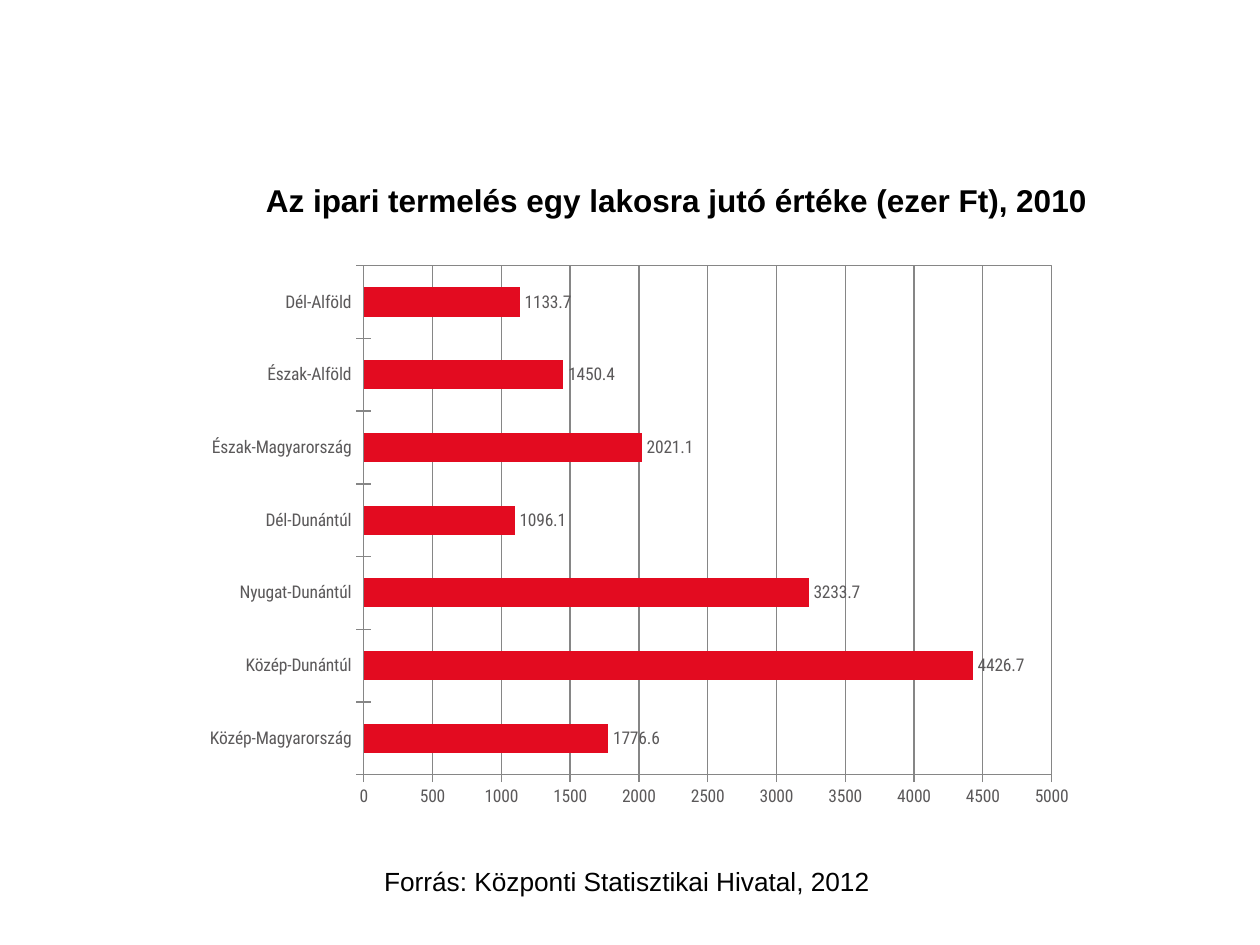
from dataclasses import dataclass

from lxml import etree
from pptx import Presentation
from pptx.chart.data import CategoryChartData
from pptx.dml.color import RGBColor
from pptx.enum.chart import XL_CHART_TYPE, XL_LABEL_POSITION, XL_TICK_MARK
from pptx.enum.text import MSO_ANCHOR, MSO_AUTO_SIZE, PP_ALIGN
from pptx.oxml import parse_xml
from pptx.util import Pt


@dataclass(frozen=True)
class Theme:
    ink: RGBColor = RGBColor(0x00, 0x00, 0x00)
    label: RGBColor = RGBColor(0x5B, 0x59, 0x5A)
    bar: RGBColor = RGBColor(0xE3, 0x0B, 0x20)
    rule: RGBColor = RGBColor(0x86, 0x86, 0x86)
    text_face: str = "Arial"
    chart_face: str = "Roboto Condensed"
    title_size: Pt = Pt(18)
    source_size: Pt = Pt(15)
    label_size: Pt = Pt(10)


theme = Theme()


def format_font(font, color, **values):
    for attribute, value in values.items():
        setattr(font, attribute, value)
    font.color.rgb = color


prs = Presentation()
prs.slide_width, prs.slide_height = Pt(720), Pt(540)
slide = prs.slides.add_slide(prs.slide_layouts[5])

# Industrial output by region, listed from the bottom bar upwards
output_per_head = {
    "Közép-Magyarország": 1776.6,
    "Közép-Dunántúl": 4426.7,
    "Nyugat-Dunántúl": 3233.7,
    "Dél-Dunántúl": 1096.1,
    "Észak-Magyarország": 2021.1,
    "Észak-Alföld": 1450.4,
    "Dél-Alföld": 1133.7,
}
regions = CategoryChartData(number_format="0.0")
regions.categories = list(output_per_head)
regions.add_series("Series 1", list(output_per_head.values()))
chart = slide.shapes.add_chart(
    XL_CHART_TYPE.BAR_CLUSTERED, Pt(110.9), Pt(145.4), Pt(510.5), Pt(323.3), regions
).chart
chart.has_legend = False
chart.has_title = False
label_format = dict(name=theme.chart_face, size=theme.label_size, bold=False)
format_font(chart.font, theme.label, **label_format)

bars = chart.plots[0]
bars.gap_width = 150
bars.vary_by_categories = False
bars.series[0].format.fill.solid()
bars.series[0].format.fill.fore_color.rgb = theme.bar

bars.has_data_labels = True
values = bars.data_labels
values.show_value = True
values.position = XL_LABEL_POSITION.OUTSIDE_END
values.number_format = "0.0"
values.number_format_is_linked = False
format_font(values.font, theme.label, **label_format)

scale = chart.value_axis
scale.minimum_scale, scale.maximum_scale, scale.major_unit = 0, 5000, 500
scale.has_major_gridlines = True
scale.tick_labels.number_format = "0"
scale.tick_labels.number_format_is_linked = False
for axis in (chart.category_axis, scale):
    axis.major_tick_mark = XL_TICK_MARK.CROSS
    format_font(axis.tick_labels.font, theme.label, **label_format)
for line in (chart.category_axis.format.line, scale.format.line,
             scale.major_gridlines.format.line):
    line.width = Pt(0.75)
    line.color.rgb = theme.rule

# Fixed inner plot area with a thin frame
CHART_NS = "http://schemas.openxmlformats.org/drawingml/2006/chart"
DRAWING_NS = "http://schemas.openxmlformats.org/drawingml/2006/main"
plot_area = chart.element.find(f".//{{{CHART_NS}}}plotArea")
for old_layout in plot_area.findall(f"{{{CHART_NS}}}layout"):
    plot_area.remove(old_layout)
layout = parse_xml(f'<c:layout xmlns:c="{CHART_NS}"><c:manualLayout/></c:layout>')
placement = dict(layoutTarget="inner", xMode="edge", yMode="edge",
                 x=0.19, y=0.02, w=0.77, h=0.9)
for tag, value in placement.items():
    etree.SubElement(layout[0], f"{{{CHART_NS}}}{tag}").set("val", str(value))
plot_area.insert(0, layout)
plot_area.append(parse_xml(
    f'<c:spPr xmlns:c="{CHART_NS}" xmlns:a="{DRAWING_NS}"><a:noFill/>'
    f'<a:ln w="9525"><a:solidFill><a:srgbClr val="{theme.rule}"/></a:solidFill></a:ln>'
    '</c:spPr>'
))

source = slide.shapes.add_textbox(Pt(212.4), Pt(491), Pt(295.2), Pt(25.2))
source.text_frame.text = "Forrás: Központi Statisztikai Hivatal, 2012"
source.text_frame.word_wrap = False
format_font(source.text_frame.paragraphs[0].font, theme.ink,
            name=theme.text_face, size=theme.source_size)

title = slide.shapes.title
title.left, title.top, title.width, title.height = Pt(144.7), Pt(100.1), Pt(504.7), Pt(28.8)
title.text_frame.text = "Az ipari termelés egy lakosra jutó értéke (ezer Ft), 2010"
title.text_frame.word_wrap = True
title.text_frame.paragraphs[0].alignment = PP_ALIGN.LEFT
format_font(title.text_frame.paragraphs[0].font, theme.ink,
            name=theme.text_face, size=theme.title_size, bold=True)

for caption in (source, title):
    caption.text_frame.auto_size = MSO_AUTO_SIZE.SHAPE_TO_FIT_TEXT
    caption.text_frame.vertical_anchor = MSO_ANCHOR.TOP

prs.save("out.pptx")
